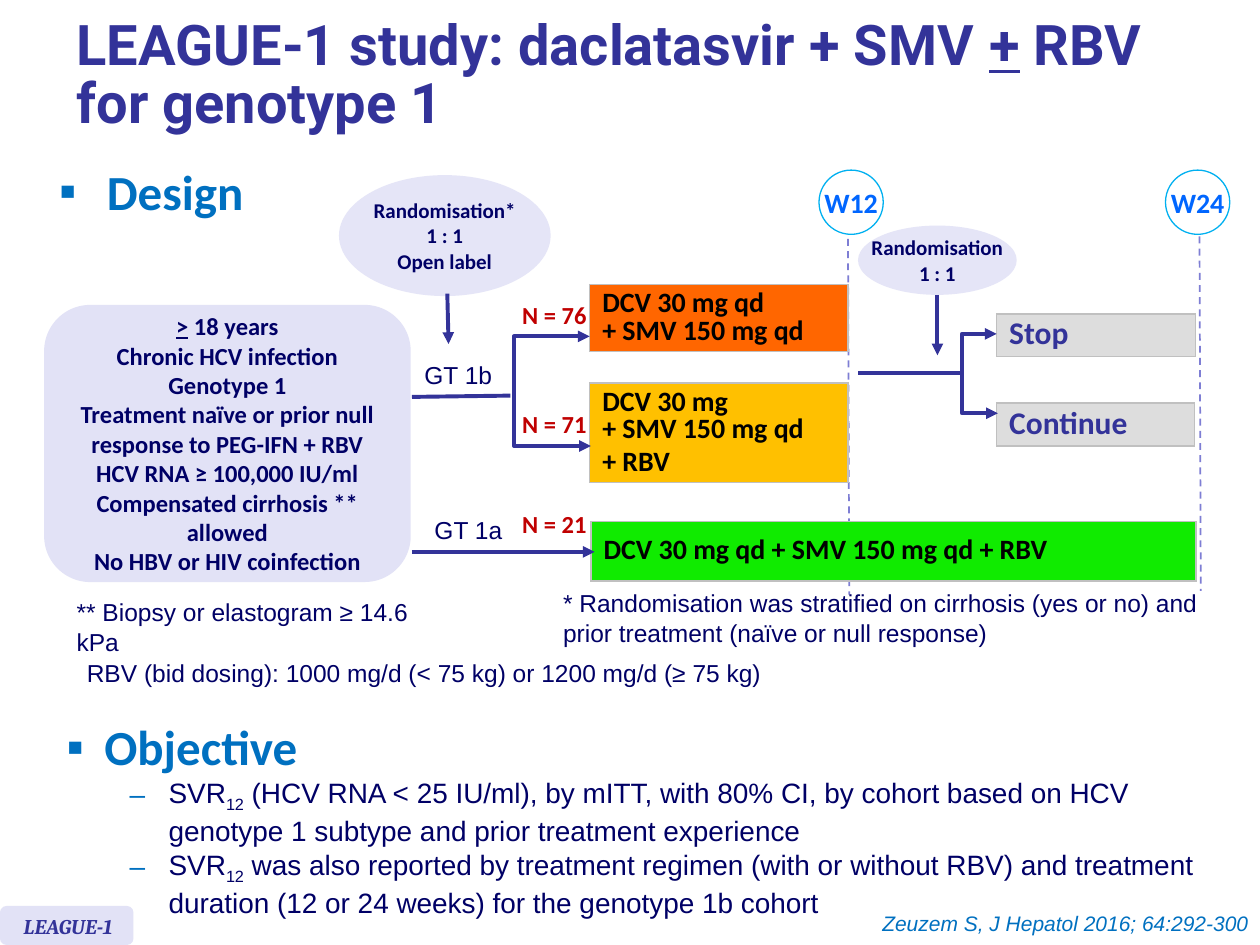
from lxml import etree
from pptx import Presentation
from pptx.dml.color import RGBColor
from pptx.enum.dml import MSO_LINE
from pptx.enum.shapes import MSO_CONNECTOR, MSO_SHAPE
from pptx.enum.text import MSO_ANCHOR, PP_ALIGN
from pptx.oxml.ns import qn
from pptx.util import Pt

PX = 9144
LEFT, CENTER, RIGHT = PP_ALIGN.LEFT, PP_ALIGN.CENTER, PP_ALIGN.RIGHT
TOP, MIDDLE = MSO_ANCHOR.TOP, MSO_ANCHOR.MIDDLE
OVAL, ROUNDED = MSO_SHAPE.OVAL, MSO_SHAPE.ROUNDED_RECTANGLE
STRAIGHT, ELBOW = MSO_CONNECTOR.STRAIGHT, MSO_CONNECTOR.ELBOW

INDIGO = RGBColor(0x33, 0x33, 0x99)
NAVY = RGBColor(0x00, 0x00, 0x66)
BLUE = RGBColor(0x00, 0x70, 0xC0)
WEEK_BLUE = RGBColor(0x00, 0x66, 0xFF)
SKY = RGBColor(0x00, 0xB0, 0xF0)
DASH_VIOLET = RGBColor(0x7E, 0x7E, 0xD4)
LAVENDER = RGBColor(0xE2, 0xE2, 0xF6)
PALE_LAVENDER = RGBColor(0xE5, 0xE5, 0xF7)
RED = RGBColor(0xC0, 0x00, 0x00)
ORANGE = RGBColor(0xFF, 0x66, 0x00)
AMBER = RGBColor(0xFF, 0xC0, 0x00)
GREEN = RGBColor(0x10, 0xEB, 0x00)
GREY = RGBColor(0xDD, 0xDD, 0xDD)
BORDER_GREY = RGBColor(0xC0, 0xC0, 0xC0)
BLACK = RGBColor(0x00, 0x00, 0x00)
WHITE = RGBColor(0xFF, 0xFF, 0xFF)

TITLE_STYLE = ("Roboto", 32, INDIGO, "b")
HEADING = ("Calibri", 28, BLUE, "b")
OBJECTIVE_STYLE = ("Arial", 16, NAVY, "")
NOTE = ("Arial", 14, NAVY, "")
CRITERIA_STYLE = ("Calibri", 14, NAVY, "b")
RANDOM_STYLE = ("Calibri", 12, NAVY, "b")
WEEK_STYLE = ("Calibri", 16, WEEK_BLUE, "b")
COUNT_STYLE = ("Calibri", 14, RED, "b")
ARM_STYLE = ("Calibri", 16, BLACK, "b")
OUTCOME_STYLE = ("Calibri", 18, INDIGO, "b")
BADGE_STYLE = ("Cambria", 12, INDIGO, "bi")
CITATION_STYLE = ("Arial", 12, BLUE, "i")

TITLE = [[("LEAGUE-1 study: daclatasvir + SMV ", ""), ("+", "u"), (" RBV for genotype 1", "")]]
CRITERIA = [
    [(">", "u"), (" 18 years", "")],
    "Chronic HCV infection",
    "Genotype 1",
    "Treatment naïve or prior null response to PEG-IFN + RBV",
    "HCV RNA ≥ 100,000 IU/ml",
    "Compensated cirrhosis ** allowed",
    "No HBV or HIV coinfection",
]
OBJECTIVES = [
    [("SVR", ""), ("12", "s"), (" (HCV RNA < 25 IU/ml), by mITT, with 80% CI, by cohort based on "
                               "HCV genotype 1 subtype and prior treatment experience", "")],
    [("SVR", ""), ("12", "s"), (" was also reported by treatment regimen (with or without RBV) and "
                               "treatment duration (12 or 24 weeks) for the genotype 1b cohort", "")],
]
RANDOMISATIONS = [
    ((269, 139, 168, 96), ["Randomisation*", "1 : 1", "Open label"]),
    ((681, 179, 126, 55), ["Randomisation", "1 : 1"]),
]
WEEKS = [("W12", 650), ("W24", 925)]
ARMS = [
    ((468, 226, 205, 53), ORANGE, ARM_STYLE, ["DCV 30 mg qd\n+ SMV 150 mg qd"]),
    ((468, 304, 205, 79), AMBER, ARM_STYLE, ["DCV 30 mg\n+ SMV 150 mg qd", "+ RBV"]),
    ((469, 414, 480, 47), GREEN, ARM_STYLE, ["DCV 30 mg qd + SMV 150 mg qd + RBV"]),
    ((791, 249, 158, 34), GREY, OUTCOME_STYLE, ["Stop"]),
    ((791, 320, 157, 34), GREY, OUTCOME_STYLE, ["Continue"]),
]
COUNTS = [("N = 76", 233), ("N = 71", 320), ("N = 21", 399)]
NOTES = [
    ((437, 462, 551, 57), True, "* Randomisation was stratified on cirrhosis (yes or no) and "
                                "prior treatment (naïve or null response)"),
    ((51, 469, 314, 34), False, "** Biopsy or elastogram ≥ 14.6 kPa"),
    ((59, 517, 565, 34), False, "RBV (bid dosing): 1000 mg/d (< 75 kg) or 1200 mg/d (≥ 75 kg)"),
    ((327, 281, 74, 34), False, "GT 1b"),
    ((335, 404, 74, 34), False, "GT 1a"),
]
WEEK_LINES = [(673, 180, 674, 472), (952, 178, 953, 469)]
PLAIN_LINES = [(681, 296, 764, 296), (327, 315, 405, 314)]
ARROWS = [(355, 233, 356, 273), (744, 234, 744, 282), (327, 438, 472, 438)]
FORKS = [(791, 265, 328, 763), (468, 267, 354, 407)]

prs = Presentation()
prs.slide_width, prs.slide_height = 1000 * PX, 750 * PX
slide = prs.slides.add_slide(prs.slide_layouts[6])
shapes = slide.shapes


def emu(box):
    return [n * PX for n in box]


def child(parent, tag, **attributes):
    return etree.SubElement(parent, qn(tag), attributes)


def write(frame, paragraphs, style, align=LEFT, spacing=None, bullet=None, more=False):
    font_name, size, color, marks = style
    for i, content in enumerate(paragraphs):
        para = frame.add_paragraph() if more or i else frame.paragraphs[0]
        para.alignment = align
        if spacing:
            para.line_spacing = spacing
            if i:
                para.space_before = Pt(round(size * 0.2, 1))
        if bullet:
            symbol, margin, hanging, level = bullet
            para.level = level
            props = para._p.get_or_add_pPr()
            props.set("marL", str(margin * PX))
            props.set("indent", str(-hanging * PX))
            child(child(props, "a:buClr"), "a:srgbClr", val=str(BLUE))
            child(props, "a:buFont", typeface="Arial")
            child(props, "a:buChar", char=symbol)
        for text, extra in [(content, "")] if isinstance(content, str) else content:
            for j, line in enumerate(text.split("\n")):
                if j:
                    para.add_line_break()
                run = para.add_run()
                run.text = line
                font = run.font
                font.name, font.size, font.color.rgb = font_name, Pt(size), color
                font.bold, font.italic = "b" in marks, "i" in marks
                if extra == "u":
                    font.underline = True
                if extra == "s":
                    run._r.get_or_add_rPr().set("baseline", "-25000")


def text_box(box, paragraphs, style, wrap=True, anchor=TOP, **layout):
    frame = shapes.add_textbox(*emu(box)).text_frame
    frame.word_wrap, frame.vertical_anchor = wrap, anchor
    write(frame, paragraphs, style, **layout)
    return frame


def panel(kind, box, fill, paragraphs=(), style=RANDOM_STYLE, outline=None, wrap=False):
    shape = shapes.add_shape(kind, *emu(box))
    shape.shadow.inherit = False
    shape.fill.solid()
    shape.fill.fore_color.rgb = fill
    if outline:
        shape.line.color.rgb, shape.line.width = outline, Pt(0.75)
    else:
        shape.line.fill.background()
    shape.text_frame.word_wrap, shape.text_frame.vertical_anchor = wrap, MIDDLE
    write(shape.text_frame, paragraphs, style, CENTER)


def connect(ends, color=INDIGO, width=2.25, kind=STRAIGHT, heads=()):
    link = shapes.add_connector(kind, *emu(ends))
    link.line.color.rgb, link.line.width = color, Pt(width)
    for end in heads:
        child(link.line._get_or_add_ln(), end, type="triangle")
    child(link._element.spPr, "a:effectLst")
    return link


def arm(box, fill, style, paragraphs):
    table = shapes.add_table(1, 1, *emu(box)).table
    table.first_row = table.horz_banding = False
    cell = table.cell(0, 0)
    cell.vertical_anchor = MIDDLE
    for side in ("a:lnL", "a:lnR", "a:lnT", "a:lnB"):
        border = child(cell._tc.get_or_add_tcPr(), side, w=str(Pt(1)))
        child(child(border, "a:solidFill"), "a:srgbClr", val=str(BORDER_GREY))
    cell.fill.solid()
    cell.fill.fore_color.rgb = fill
    write(cell.text_frame, paragraphs, style, spacing=0.8)


for ends in WEEK_LINES:
    connect(ends, DASH_VIOLET, 1).line.dash_style = MSO_LINE.DASH
for ends in PLAIN_LINES:
    connect(ends)
text_box((547, 718, 454, 30), ["Zeuzem S, J Hepatol 2016; 64:292-300"], CITATION_STYLE, align=RIGHT)
panel(ROUNDED, (0, 719, 106, 31), LAVENDER)
text_box((9, 720, 100, 30), ["LEAGUE-1"], BADGE_STYLE)
text_box((51, 8, 913, 107), TITLE, TITLE_STYLE, anchor=MIDDLE, spacing=0.85)
text_box((37, 123, 198, 63), ["Design"], HEADING, bullet=("▪", 38, 38, 0))
panel(ROUNDED, (35, 242, 291, 220), LAVENDER, CRITERIA, CRITERIA_STYLE, wrap=True)
for details in ARMS:
    arm(*details)
for week, x in WEEKS:
    panel(OVAL, (x, 135, 51, 51), WHITE, [week], WEEK_STYLE, SKY)
for box, lines in RANDOMISATIONS:
    panel(OVAL, box, PALE_LAVENDER, lines)
for ends in ARROWS:
    connect(ends, heads=["a:tailEnd"])
for x, upper, lower, spine in FORKS:
    fork = connect((x, upper, x + 1, lower), kind=ELBOW, heads=["a:headEnd", "a:tailEnd"])
    guides = fork._element.spPr.find(qn("a:prstGeom")).get_or_add_avLst()
    child(guides, "a:gd", name="adj1", fmla=f"val {(spine - x) * 100000}")
for count, y in COUNTS:
    text_box((404, y, 72, 34), [count], COUNT_STYLE, wrap=False, align=CENTER)
for box, wrap, note in NOTES:
    text_box(box, [note], NOTE, wrap=wrap)
objective = text_box((43, 564, 937, 165), ["Objective"], HEADING, bullet=("▪", 30, 30, 0))
write(objective, OBJECTIVES, OBJECTIVE_STYLE, bullet=("–", 81, 31, 1), more=True)

prs.save("out.pptx")
